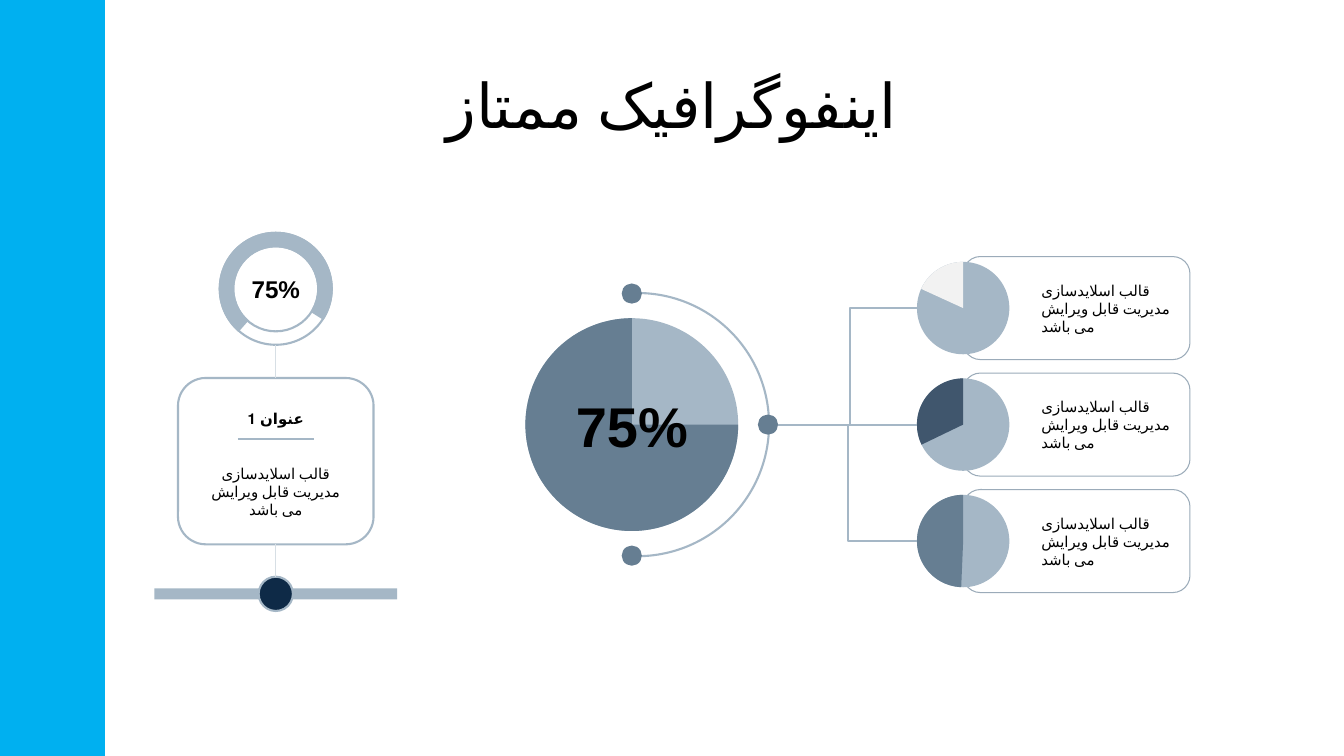
"""Build the infographic slide with a progress card, a main pie and three linked detail cards."""
import lxml.etree
import pptx
import pptx.dml.color
import pptx.enum.lang
import pptx.enum.shapes
import pptx.enum.text
import pptx.oxml.ns
import pptx.util

Pt = pptx.util.Pt
RGBColor = pptx.dml.color.RGBColor
KIND = pptx.enum.shapes.MSO_SHAPE
CONNECTOR = pptx.enum.shapes.MSO_CONNECTOR
ALIGN = pptx.enum.text.PP_ALIGN
ANCHOR = pptx.enum.text.MSO_ANCHOR
FARSI = pptx.enum.lang.MSO_LANGUAGE_ID.FARSI
qn = pptx.oxml.ns.qn

BLACK = RGBColor(0x00, 0x00, 0x00)
BRIGHT_BLUE = RGBColor(0x00, 0xB0, 0xF0)
MIST = RGBColor(0xA5, 0xB7, 0xC6)
SLATE = RGBColor(0x66, 0x7E, 0x92)
STEEL = RGBColor(0x40, 0x56, 0x6D)
NAVY = RGBColor(0x0E, 0x2A, 0x47)
PALE = RGBColor(0xF2, 0xF2, 0xF2)
CARD_EDGE = RGBColor(0x9B, 0xAB, 0xB9)
STEM = RGBColor(0xD7, 0xDF, 0xE5)

TITLE = ["اینفوگرافیک ممتاز"]
HEADING = ["عنوان 1"]
BODY = ["قالب اسلایدسازی", "مدیریت قابل ویرایش", "می باشد"]
PERCENT = ["75%"]
DETAILS = [(204.53, PALE), (154.22, STEEL), (92.4, SLATE)]
TOP_ANGLE = 270
ANGLE_UNIT = 0.6

AXIS_X = 197
RING_Y, RING_SIZE = 206.3, 80
CARD_TOP, CARD_BOTTOM = 270, 388.8
TIMELINE_Y, MARKER_SIZE = 424.2, 24.5
PIE_X, HUB_Y, PIE_SIZE = 451.3, 303.3, 152
ARC_X, ARC_SIZE = 455.4, 188
ORBIT, DOT_SIZE = 93.6, 14.4
HUB_X = 556
DETAIL_X, DETAIL_PITCH, DETAIL_SIZE = 688, 83.2, 66
DETAIL_WIDTH, DETAIL_HEIGHT = 162, 73.6

FRAME = {"word_wrap": True, "margin_left": Pt(9.6), "margin_right": Pt(9.6),
         "margin_top": Pt(9.6), "margin_bottom": Pt(9.6)}

deck = pptx.Presentation()
deck.slide_width, deck.slide_height = Pt(960), Pt(540)
slide = deck.slides.add_slide(deck.slide_layouts[6])


def apply(target, values):
    for name, value in values.items():
        setattr(target, name, value)


def centred(x, y, width, height):
    return Pt(x - width / 2), Pt(y - height / 2), Pt(width), Pt(height)


def add_figure(kind, x, y, width, height, fill=None, edge=None, weight=1.5, adjust=()):
    figure = slide.shapes.add_shape(kind, *centred(x, y, width, height))
    figure.shadow.inherit = False
    if fill is None:
        figure.fill.background()
    else:
        figure.fill.solid()
        figure.fill.fore_color.rgb = fill
    if edge is None:
        figure.line.fill.background()
    else:
        figure.line.color.rgb = edge
        figure.line.width = Pt(weight)
    for index, value in enumerate(adjust):
        figure.adjustments[index] = value


def add_link(x1, y1, x2, y2, color=MIST, weight=1.5, bend=None):
    kind = CONNECTOR.STRAIGHT if bend is None else CONNECTOR.ELBOW
    link = slide.shapes.add_connector(kind, Pt(x1), Pt(y1), Pt(x2), Pt(y2))
    link.line.color.rgb = color
    link.line.width = Pt(weight)
    properties = link._element.spPr
    lxml.etree.SubElement(properties, qn("a:effectLst"))
    if bend is not None:
        guides = properties.find(qn("a:prstGeom")).find(qn("a:avLst"))
        lxml.etree.SubElement(guides, qn("a:gd"), name="adj1", fmla=f"val {round(bend * 100000)}")


def add_words(lines, x, y, width, height, size=10.7, bold=False,
              align=ALIGN.CENTER, anchor=ANCHOR.MIDDLE, spacing=1.0):
    frame = slide.shapes.add_textbox(*centred(x, y, width, height)).text_frame
    apply(frame, FRAME | {"vertical_anchor": anchor})
    paragraph = frame.paragraphs[0]
    apply(paragraph, {"alignment": align, "line_spacing": spacing})
    for index, line in enumerate(lines):
        if index:
            paragraph.add_line_break()
        run = paragraph.add_run()
        run.text = line
        apply(run.font, {"name": "Arial", "size": Pt(size), "bold": bold, "language_id": FARSI})
        run.font.color.rgb = BLACK


def add_pie(x, y, size, start, end, color):
    add_figure(KIND.OVAL, x, y, size, size, MIST)
    add_figure(KIND.PIE, x, y, size, size, color,
               adjust=(start * ANGLE_UNIT, end * ANGLE_UNIT))


def add_progress_card():
    add_figure(KIND.RECTANGLE, AXIS_X, TIMELINE_Y, 173.5, 8, MIST)
    add_figure(KIND.DONUT, AXIS_X, RING_Y, RING_SIZE, RING_SIZE, edge=MIST, adjust=(0.12,))
    add_figure(KIND.BLOCK_ARC, AXIS_X, RING_Y, RING_SIZE, RING_SIZE, MIST, MIST,
               adjust=(131.9 * ANGLE_UNIT, 32.1 * ANGLE_UNIT, 0.12))
    add_figure(KIND.ROUNDED_RECTANGLE, AXIS_X, (CARD_TOP + CARD_BOTTOM) / 2,
               139.7, CARD_BOTTOM - CARD_TOP, edge=MIST)
    add_figure(KIND.OVAL, AXIS_X, TIMELINE_Y, MARKER_SIZE, MARKER_SIZE, NAVY, MIST)
    for top, bottom in [(RING_Y + RING_SIZE / 2, CARD_TOP),
                        (CARD_BOTTOM, TIMELINE_Y - MARKER_SIZE / 2)]:
        add_link(AXIS_X, top, AXIS_X, bottom, STEM, 0.75)
    add_words(BODY, AXIS_X, 351.4, 121.7, 47.5)
    add_link(AXIS_X - 27, 313.6, AXIS_X + 27, 313.6)
    add_words(HEADING, AXIS_X, 298.8, 88.6, 23, bold=True)
    add_words(PERCENT, AXIS_X, RING_Y, 61.2, 38.2, 17.3, True)


def add_main_pie():
    add_figure(KIND.ARC, ARC_X, HUB_Y, ARC_SIZE, ARC_SIZE, edge=MIST,
               adjust=(TOP_ANGLE * ANGLE_UNIT, 88.3 * ANGLE_UNIT))
    add_pie(PIE_X, HUB_Y, PIE_SIZE, 0, TOP_ANGLE, SLATE)
    for across, down in [(0, -1), (0, 1), (1, 0)]:
        add_figure(KIND.OVAL, PIE_X + across * (ORBIT + 3.7), HUB_Y + down * ORBIT,
                   DOT_SIZE, DOT_SIZE, SLATE)


def add_details():
    for row, (start, color) in enumerate(DETAILS):
        y = HUB_Y + (row - 1) * DETAIL_PITCH
        add_figure(KIND.ROUNDED_RECTANGLE, DETAIL_X + DETAIL_WIDTH / 2, y,
                   DETAIL_WIDTH, DETAIL_HEIGHT, edge=CARD_EDGE, weight=0.75)
        add_pie(DETAIL_X, y, DETAIL_SIZE, start, TOP_ANGLE, color)
        add_words(BODY, 793.6, y, 118.8, 46, align=ALIGN.LEFT)
    for row, bend in [(0, 0.515), (2, 0.5), (1, None)]:
        add_link(HUB_X, HUB_Y, DETAIL_X - DETAIL_SIZE / 2,
                 HUB_Y + (row - 1) * DETAIL_PITCH, bend=bend)


add_figure(KIND.RECTANGLE, 37.5, 270, 75, 540, BRIGHT_BLUE)
add_progress_card()
add_main_pie()
add_details()
add_words(PERCENT, PIE_X, HUB_Y, 104.4, 65.6, 40, True)
add_words(TITLE, 480, 91.8, 350.6, 95.8, 44, anchor=ANCHOR.TOP, spacing=0.9)
deck.save("out.pptx")
